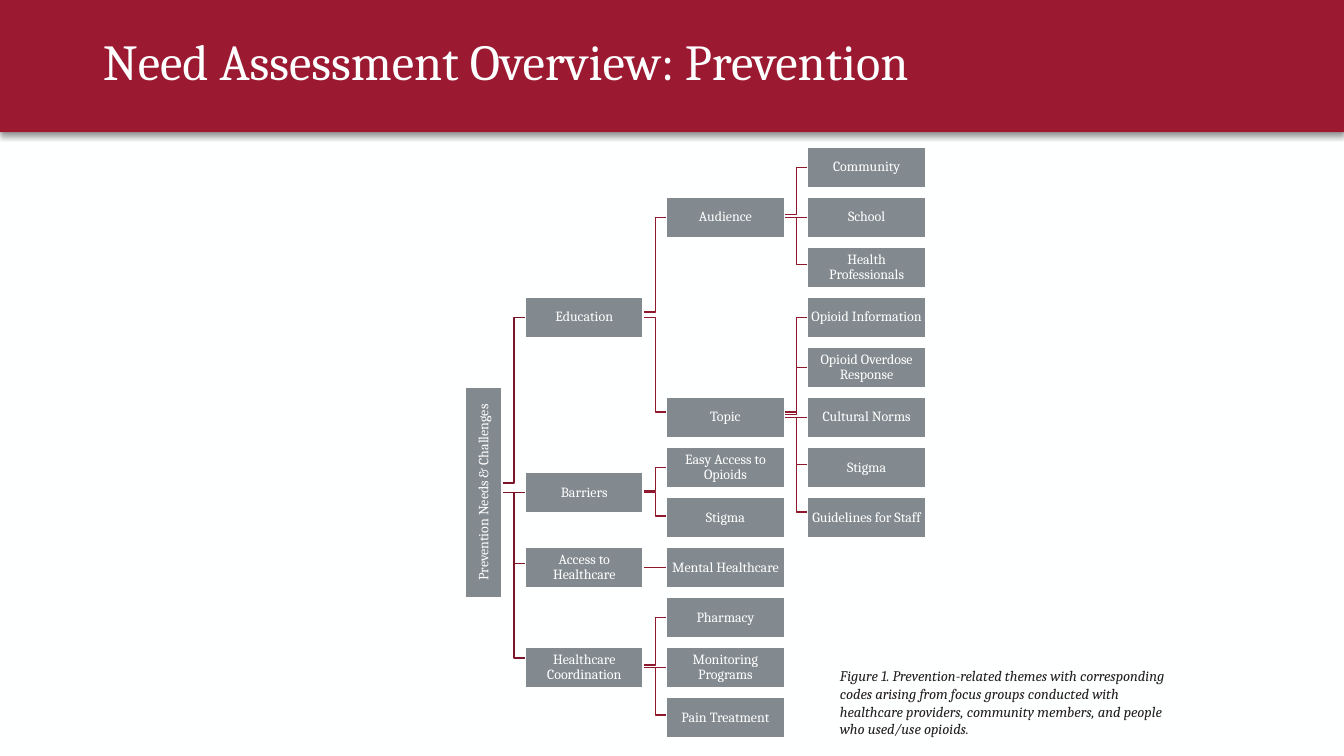
from dataclasses import dataclass

from lxml import etree
from pptx import Presentation
from pptx import util as u
from pptx.dml.color import RGBColor
from pptx.enum import shapes, text
from pptx.oxml import parse_xml
from pptx.oxml.ns import nsdecls, qn


@dataclass(frozen=True)
class Theme:
    font: str = "Cambria"
    paper: str = "FEFFFF"
    white: str = "FFFFFF"
    band: str = "9C1932"
    node: str = "828A8F"
    root_link: str = "7D1528"
    link: str = "8F182D"
    ink: str = "231F20"
    title_size: float = 36
    node_size: float = 10
    caption_size: float = 10.5


THEME = Theme()

# Grid of the tree, in inches
WIDTH, HEIGHT = 13.33, 7.5
COLUMN_LEFT, COLUMN_STEP = 3.81, 1.4
ROW_MIDDLE, ROW_STEP = 1.66, 5.46 / 11
NODE_WIDTH, NODE_HEIGHT = 1.17, 0.4
ROOT_LENGTH, ROOT_THICKNESS = 2.09, 0.36
LINK_REACH = 0.24
LINK_SHARE = 0.945  # part of the row gap that a bent link covers

TREE = ("Prevention Needs & Challenges", [
    ("Education", [
        ("Audience", [
            ("Community", []),
            ("School", []),
            ("Health Professionals", []),
        ]),
        ("Topic", [
            ("Opioid Information", []),
            ("Opioid Overdose Response", []),
            ("Cultural Norms", []),
            ("Stigma", []),
            ("Guidelines for Staff", []),
        ]),
    ]),
    ("Barriers", [("Easy Access to Opioids", []), ("Stigma", [])]),
    ("Access to\nHealthcare", [("Mental Healthcare", [])]),
    ("Healthcare Coordination", [
        ("Pharmacy", []),
        ("Monitoring\nPrograms", []),
        ("Pain Treatment", []),
    ]),
])

CAPTION = ("Figure 1. Prevention-related themes with corresponding codes arising "
           "from focus groups conducted with healthcare providers, community "
           "members, and people who used/use opioids.")


@dataclass
class Node:
    label: str
    column: int
    row: float
    children: list

    @property
    def left(self):
        return COLUMN_LEFT + self.column * COLUMN_STEP

    @property
    def right(self):
        return self.left + NODE_WIDTH

    @property
    def middle(self):
        return ROW_MIDDLE + self.row * ROW_STEP


def lay_out(branch, column, last_rows):
    """Leaves take the next row of their column; parents centre on children."""
    label, branches = branch
    children = [lay_out(child, column + 1, last_rows) for child in branches]
    if children:
        row = (children[0].row + children[-1].row) / 2
    else:
        row = last_rows.get(column, -1) + 1
    last_rows[column] = row
    return Node(label, column, row, children)


def inches(*lengths):
    return [u.Inches(length) for length in lengths]


def write(frame, words, size, color, align=text.PP_ALIGN.LEFT, spacing=None, italic=None):
    frame.word_wrap = True
    frame.auto_size = text.MSO_AUTO_SIZE.NONE
    para = frame.paragraphs[0]
    para.alignment = align
    para.line_spacing = spacing
    for number, line in enumerate(words.split("\n")):
        if number:
            para.add_line_break()
        span = para.add_run()
        span.text = line
        span.font.name = THEME.font
        span.font.size = u.Pt(size)
        span.font.italic = italic
        span.font.color.rgb = RGBColor.from_string(color)


def set_insets(frame, inset):
    frame.margin_left = frame.margin_right = u.Inches(inset)
    frame.margin_top = frame.margin_bottom = u.Inches(inset)


def add_block(page, left, top, width, height, fill):
    box = page.shapes.add_shape(shapes.MSO_SHAPE.RECTANGLE,
                                *inches(left, top, width, height))
    box.shadow.inherit = False
    box.fill.solid()
    box.fill.fore_color.rgb = RGBColor.from_string(fill)
    return box


def add_band(page):
    band = add_block(page, 0, 0, WIDTH, 0.175 * HEIGHT, THEME.band)
    band.line.fill.background()
    effects = band._element.spPr.find(qn("a:effectLst"))
    effects.append(parse_xml(
        f'<a:outerShdw {nsdecls("a")} blurRad="50800" dist="38100" dir="5400000">'
        '<a:srgbClr val="000000"><a:alpha val="40000"/></a:srgbClr></a:outerShdw>'))
    page.shapes._spTree.insert(2, band._element)  # behind the title


def add_title(page, words):
    title = page.shapes.title
    title.left, title.top, title.width, title.height = inches(0.92, 0.17, 11.5, 0.94)
    title.text_frame.vertical_anchor = text.MSO_ANCHOR.MIDDLE
    write(title.text_frame, words, THEME.title_size, THEME.paper, spacing=0.9)


def add_link(page, parent, child):
    start, end = parent.right, parent.right + LINK_REACH
    gap = child.middle - parent.middle
    if abs(gap) < 0.01:
        link = page.shapes.add_connector(
            shapes.MSO_CONNECTOR.STRAIGHT,
            *inches(start, parent.middle, end, child.middle))
        etree.SubElement(link._element.spPr, qn("a:effectLst"))
    else:
        upper = min(parent.middle, child.middle)
        lower = upper + LINK_SHARE * abs(gap)
        first, last = (upper, lower) if gap > 0 else (lower, upper)
        bend = (start + end) / 2
        outline = page.shapes.build_freeform(*inches(start, first))
        outline.add_line_segments(
            [inches(bend, first), inches(bend, last), inches(end, last)], close=False)
        link = outline.convert_to_shape()
        link.shadow.inherit = False
        link.fill.background()
    color = THEME.link if parent.column else THEME.root_link
    link.line.color.rgb = RGBColor.from_string(color)
    link.line.width = u.Pt(1)


def add_node(page, node):
    is_root = node.column == 0
    width, height = (ROOT_LENGTH, ROOT_THICKNESS) if is_root else (NODE_WIDTH, NODE_HEIGHT)
    center = node.right - ROOT_THICKNESS / 2 if is_root else node.left + width / 2
    box = add_block(page, center - width / 2, node.middle - height / 2,
                    width, height, THEME.node)
    box.rotation = 270 if is_root else 0
    box.line.color.rgb = RGBColor.from_string(THEME.white)
    box.line.width = u.Pt(1)
    set_insets(box.text_frame, 0.01)
    box.text_frame.vertical_anchor = text.MSO_ANCHOR.MIDDLE
    write(box.text_frame, node.label, THEME.node_size, THEME.white,
          text.PP_ALIGN.CENTER, spacing=0.9)


def add_links(page, node):
    for child in node.children:
        add_link(page, node, child)
        add_links(page, child)


def add_nodes(page, node):
    add_node(page, node)
    for child in node.children:
        add_nodes(page, child)


def add_caption(page):
    box = page.shapes.add_textbox(*inches(8.33, 6.62, 3.42, 0.71))
    set_insets(box.text_frame, 0)
    write(box.text_frame, CAPTION, THEME.caption_size, THEME.ink, italic=True)


def main():
    deck = Presentation()
    deck.slide_width, deck.slide_height = inches(WIDTH, HEIGHT)
    page = deck.slides.add_slide(deck.slide_layouts[5])
    page.background.fill.solid()
    page.background.fill.fore_color.rgb = RGBColor.from_string(THEME.paper)

    # Header
    add_band(page)
    add_title(page, "Need Assessment Overview: Prevention")

    # Tree: links lie behind the boxes
    root = lay_out(TREE, 0, {})
    add_links(page, root)
    add_nodes(page, root)

    add_caption(page)
    deck.save("out.pptx")


if __name__ == "__main__":
    main()
